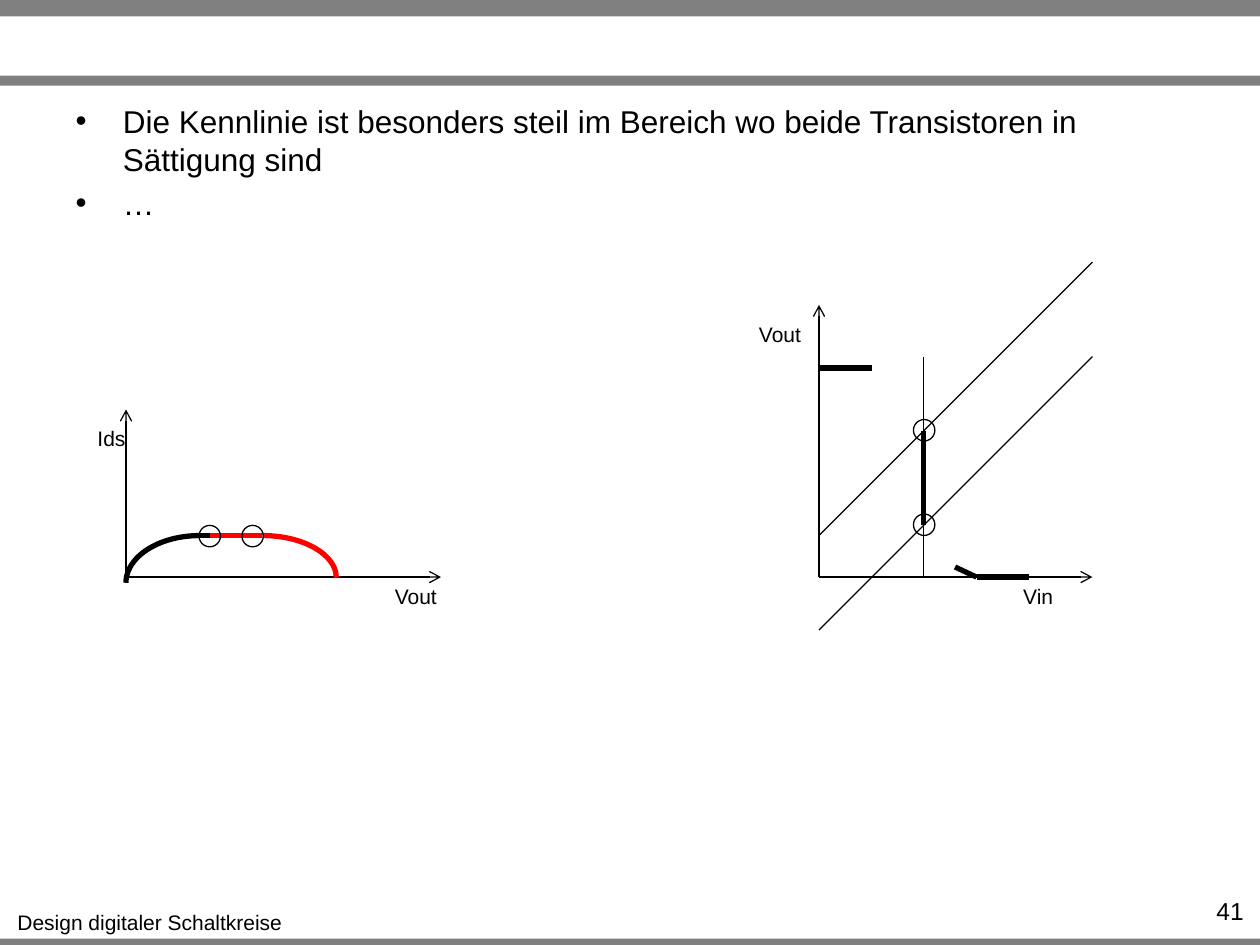
from lxml import etree
from pptx import Presentation
from pptx.dml.color import RGBColor
from pptx.enum.shapes import MSO_CONNECTOR, MSO_SHAPE
from pptx.enum.text import MSO_AUTO_SIZE, PP_ALIGN
from pptx.oxml.ns import qn
from pptx.util import Inches, Pt

STRAIGHT = MSO_CONNECTOR.STRAIGHT
RECTANGLE, OVAL, ARC = MSO_SHAPE.RECTANGLE, MSO_SHAPE.OVAL, MSO_SHAPE.ARC
CENTER, RIGHT = PP_ALIGN.CENTER, PP_ALIGN.RIGHT
NO_AUTOFIT = MSO_AUTO_SIZE.NONE

THEME = {
    "font": "Arial",
    "ink": RGBColor(0, 0, 0),
    "accent": RGBColor(255, 0, 0),
    "bar": RGBColor(128, 128, 128),
    "body": Pt(18),
    "number": Pt(14),
    "label": Pt(12),
    "thin": Pt(0.75),
    "thick": Pt(3),
}


def write(paragraph, text, size):
    run = paragraph.add_run()
    run.text = text
    font_format = {"name": THEME["font"], "size": THEME[size]}
    for attribute, value in font_format.items():
        setattr(run.font, attribute, value)
    run.font.color.rgb = THEME["ink"]


def draw_line(start, end, weight="thin", color="ink", arrow=False):
    segment = slide.shapes.add_connector(
        STRAIGHT, *(Inches(value) for value in (*start, *end))
    )
    segment.line.color.rgb = THEME[color]
    segment.line.width = THEME[weight]
    if arrow:
        stroke = segment.line._get_or_add_ln()
        etree.SubElement(stroke, qn("a:tailEnd"), type="arrow")
    etree.SubElement(segment._element.spPr, qn("a:effectLst"))


prs = Presentation()
prs.slide_width, prs.slide_height = Inches(10), Inches(7.5)
slide = prs.slides.add_slide(prs.slide_layouts[1])
heading, statements = slide.placeholders
heading.element.getparent().remove(heading.element)

for top, height in [(7.45, 0.08), (0, 0.13), (0.6, 0.08)]:
    bar = slide.shapes.add_shape(
        RECTANGLE, 0, Inches(top), prs.slide_width, Inches(height)
    )
    bar.shadow.inherit = False
    bar.fill.solid()
    bar.fill.fore_color.rgb = THEME["bar"]
    bar.line.fill.background()

body_box = {"left": 0.5, "top": 0.76, "width": 9, "height": 0.66}
for attribute, value in body_box.items():
    setattr(statements, attribute, Inches(value))
body_frame = statements.text_frame
body_frame.auto_size = NO_AUTOFIT
write(
    body_frame.paragraphs[0],
    "Die Kennlinie ist besonders steil im Bereich wo beide Transistoren in Sättigung sind",
    "body",
)
write(body_frame.add_paragraph(), "…", "body")

captions = [
    ("Design digitaler Schaltkreise", 0.03, 7.17, 2.32, 0.3, "label", CENTER),
    ("41", 9.1, 7.06, 0.87, 0.24, "number", RIGHT),
    ("Ids", 0.67, 3.33, 0.43, 0.3, "label", CENTER),
    ("Vout", 3.03, 4.58, 0.54, 0.3, "label", CENTER),
    ("Vout", 5.92, 2.5, 0.54, 0.3, "label", CENTER),
    ("Vin", 8.02, 4.58, 0.44, 0.3, "label", CENTER),
]
for text, left, top, width, height, size, alignment in captions:
    caption = slide.shapes.add_textbox(
        Inches(left), Inches(top), Inches(width), Inches(height)
    )
    caption.text_frame.word_wrap = size == "number"
    paragraph = caption.text_frame.paragraphs[0]
    paragraph.alignment = alignment
    write(paragraph, text, size)

AXIS_Y = 4.58
for origin_x, end_x, top_y in [(1, 3.5, 3.25), (6.5, 8.67, 2.42)]:
    draw_line((origin_x, AXIS_Y), (end_x, AXIS_Y), arrow=True)
    draw_line((origin_x, AXIS_Y), (origin_x, top_y), arrow=True)

curve_arcs = [
    (1.21, 4.04, 0.75, 270, False, "ink"),
    (1.75, 4, 0.67, 90, True, "accent"),
]
for left, top, width, rotation, mirrored, color in curve_arcs:
    curve = slide.shapes.add_shape(
        ARC, Inches(left), Inches(top), Inches(width), Inches(1.17)
    )
    curve.shadow.inherit = False
    curve.fill.background()
    curve.line.color.rgb = THEME[color]
    curve.line.width = THEME["thick"]
    curve.rotation = rotation
    if mirrored:
        curve.element.spPr.find(qn("a:xfrm")).set("flipH", "1")

draw_line((2, 4.25), (1.58, 4.25), "thick")
draw_line((1.67, 4.25), (2.08, 4.25), "thick", "accent")

for start_y in (4.25, 5):
    draw_line((6.5, start_y), (8.67, start_y - 2.17))
draw_line((7.33, 2.83), (7.33, AXIS_Y))

transfer_segments = [
    ((6.5, 2.92), (6.92, 2.92)),
    ((7.33, 4.17), (7.33, 3.42)),
    ((7.58, 4.5), (7.75, AXIS_Y)),
    ((7.75, AXIS_Y), (8.17, AXIS_Y)),
]
for start, end in transfer_segments:
    draw_line(start, end, "thick")

MARKER_SIZE = Inches(0.17)
for left, top in [(1.58, 4.17), (1.92, 4.17), (7.25, 4.08), (7.25, 3.33)]:
    marker = slide.shapes.add_shape(
        OVAL, Inches(left), Inches(top), MARKER_SIZE, MARKER_SIZE
    )
    marker.shadow.inherit = False
    marker.fill.background()
    marker.line.color.rgb = THEME["ink"]
    marker.line.width = THEME["thin"]

prs.save("out.pptx")
